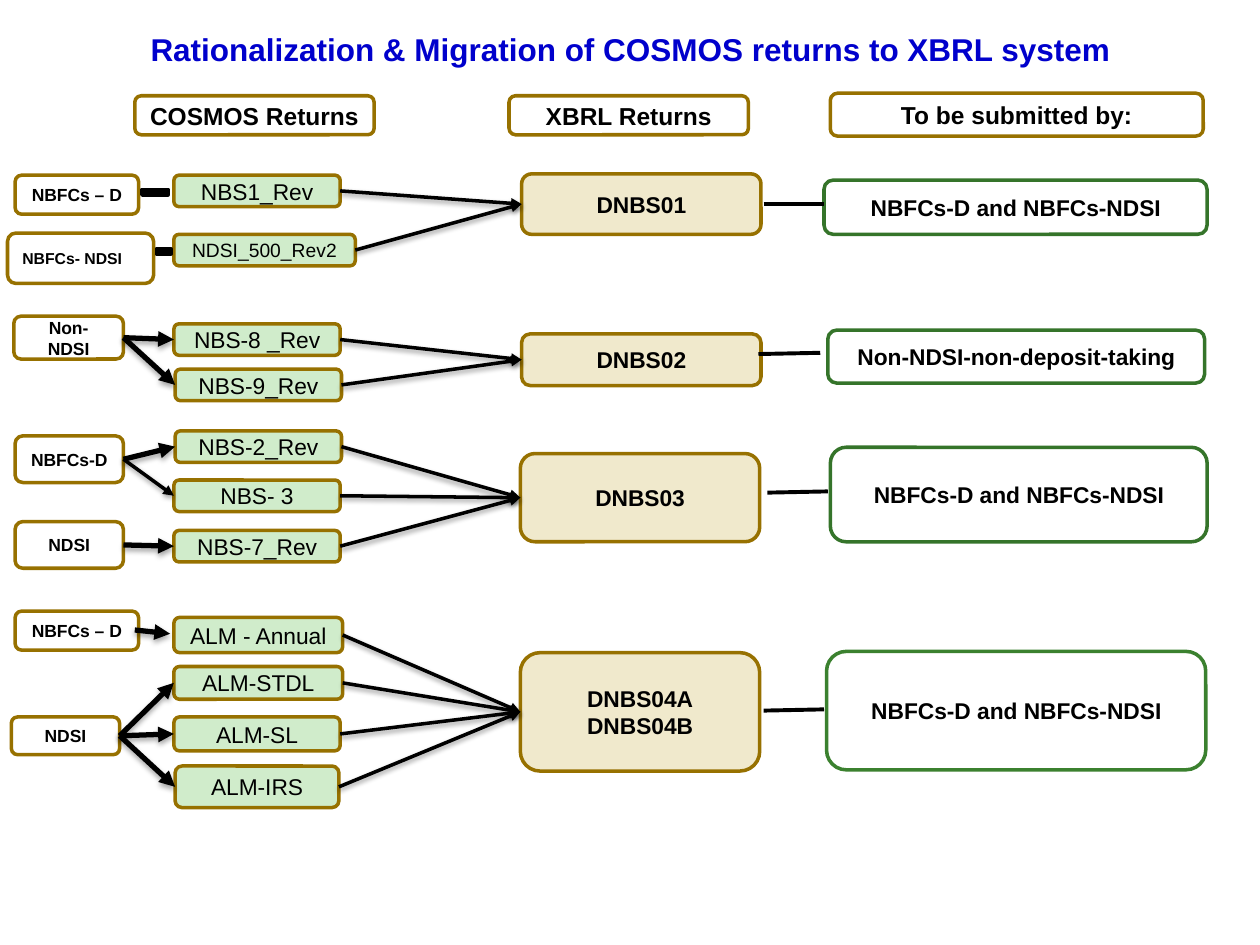
from pptx import Presentation
from pptx.dml.color import RGBColor
from pptx.enum.shapes import MSO_CONNECTOR, MSO_SHAPE
from pptx.enum.text import MSO_ANCHOR, PP_ALIGN
from pptx.oxml import parse_xml
from pptx.oxml.ns import nsdecls
from pptx.util import Pt

PX = 9144  # 100 px to the inch
BLACK, WHITE, GOLD, GREEN = "000000", "FFFFFF", "977100", "35742A"

TITLE = "Rationalization & Migration of COSMOS returns to XBRL system"

# kind: fill, outline, text size, bold
STYLES = {
    "header": (WHITE, GOLD, 14, True),
    "filer": (WHITE, GOLD, 10, True),
    "cosmos": ("D0ECCB", GOLD, 13, False),
    "xbrl": ("F0E9CC", GOLD, 13, True),
    "submitter": (WHITE, GREEN, 13, True),
}

# key: kind, text, (left, top, width, height), format changes
BOXES = {
    "head cosmos": ("header", "COSMOS Returns", (107, 76, 190, 31), {}),
    "head xbrl": ("header", "XBRL Returns", (404, 76, 190, 31), {}),
    "head by": ("header", "To be submitted by:", (659, 74, 296, 34), {}),

    "d1": ("filer", "NBFCs – D", (12, 139, 98, 31), {}),
    "ndsi1": ("filer", "NBFCs- NDSI", (6, 185, 116, 40),
              {"size": 9, "align": PP_ALIGN.JUSTIFY}),
    "nbs1": ("cosmos", "NBS1_Rev", (138, 139, 132, 25), {}),
    "ndsi500": ("cosmos", "NDSI_500_Rev2", (138, 186, 144, 25), {"size": 11}),
    "dnbs01": ("xbrl", "DNBS01", (414, 138, 190, 48), {}),
    "by1": ("submitter", "NBFCs-D and NBFCs-NDSI", (654, 143, 304, 43), {}),

    "non": ("filer", "Non-NDSI", (11, 251, 87, 34), {}),
    "nbs8": ("cosmos", "NBS-8 _Rev", (138, 257, 132, 25), {}),
    "nbs9": ("cosmos", "NBS-9_Rev", (139, 293, 132, 25), {}),
    "dnbs02": ("xbrl", "DNBS02", (414, 265, 190, 41), {}),
    "by2": ("submitter", "Non-NDSI-non-deposit-taking", (657, 262, 299, 42), {}),

    "d3": ("filer", "NBFCs-D", (12, 346, 86, 37), {}),
    "ndsi3": ("filer", "NDSI", (12, 414, 86, 37), {}),
    "nbs2": ("cosmos", "NBS-2_Rev", (139, 342, 132, 25), {}),
    "nbs3": ("cosmos", "NBS- 3", (138, 381, 132, 25), {}),
    "nbs7": ("cosmos", "NBS-7_Rev", (138, 421, 132, 25), {}),
    "dnbs03": ("xbrl", "DNBS03", (413, 360, 190, 70), {}),
    "by3": ("submitter", "NBFCs-D and NBFCs-NDSI", (659, 355, 299, 75), {}),

    "d4": ("filer", "NBFCs – D", (12, 485, 98, 31), {}),
    "ndsi4": ("filer", "NDSI", (9, 569, 86, 30), {}),
    "annual": ("cosmos", "ALM - Annual", (138, 490, 134, 28), {}),
    "stdl": ("cosmos", "ALM-STDL", (138, 529, 134, 26), {}),
    "sl": ("cosmos", "ALM-SL", (138, 569, 132, 27), {}),
    "irs": ("cosmos", "ALM-IRS", (139, 608, 130, 33), {}),
    "dnbs04": ("xbrl", "DNBS04A\nDNBS04B", (413, 518, 190, 94), {}),
    "by4": ("submitter", "NBFCs-D and NBFCs-NDSI", (656, 517, 301, 94),
            {"line": "3B812F"}),
}

# source box: (target boxes, line width)
ARROWS = {
    "nbs1": (["dnbs01"], 2), "ndsi500": (["dnbs01"], 2),
    "nbs8": (["dnbs02"], 2), "nbs9": (["dnbs02"], 2),
    "nbs2": (["dnbs03"], 2), "nbs3": (["dnbs03"], 2), "nbs7": (["dnbs03"], 2),
    "annual": (["dnbs04"], 2), "stdl": (["dnbs04"], 2),
    "sl": (["dnbs04"], 2), "irs": (["dnbs04"], 2),
    "non": (["nbs8", "nbs9"], 3), "d3": (["nbs2"], 3), "ndsi3": (["nbs7"], 3),
    "ndsi4": (["stdl", "sl", "irs"], 3),
}
THIN_ARROW = ("d3", "nbs3")
ANNUAL_ARROW = ((107, 500), (135, 503))

SUBMIT_LINES = [((606, 162), (654, 162)), ((602, 281), (651, 280)),
                ((609, 391), (657, 390)), ((606, 564), (654, 563))]
DASHES = [(109, 143, 28, 19), (122, 191, 16, 17)]


def emu(values):
    return [round(v * PX) for v in values]


def rgb(color):
    return RGBColor.from_string(color)


def add_text(tf, text, align=PP_ALIGN.CENTER, **font):
    tf.word_wrap = True
    tf.vertical_anchor = MSO_ANCHOR.MIDDLE
    for i, line in enumerate(text.split("\n")):
        p = tf.add_paragraph() if i else tf.paragraphs[0]
        p.alignment = align
        r = p.add_run()
        r.text = line
        r.font.color.rgb = rgb(font["color"])
        for name, value in {"name": "Arial", "size": Pt(font["size"]),
                            "bold": font["bold"]}.items():
            setattr(r.font, name, value)


def add_shape(s, preset, place, fill, line):
    sp = s.shapes.add_shape(preset, *emu(place))
    sp.shadow.inherit = False
    sp.fill.solid()
    sp.fill.fore_color.rgb = rgb(fill)
    sp.line.color.rgb = rgb(line)
    sp.line.width = Pt(2)
    return sp


def add_box(s, kind, text, place, changes):
    fill, line, size, bold = STYLES[kind]
    sp = add_shape(s, MSO_SHAPE.ROUNDED_RECTANGLE, place, fill,
                   changes.get("line", line))
    add_text(sp.text_frame, text, changes.get("align", PP_ALIGN.CENTER),
             size=changes.get("size", size), bold=bold, color=BLACK)


def add_line(s, start, end, width, arrow=False):
    """Draw a straight line; an arrow also gets a head and a soft shadow."""
    c = s.shapes.add_connector(MSO_CONNECTOR.STRAIGHT, *emu(start + end))
    c.line.color.rgb = rgb(BLACK)
    c.line.width = Pt(width)
    effects = parse_xml(f"<a:effectLst {nsdecls('a')}/>")
    if arrow:
        c.line._get_or_add_ln().append(
            parse_xml(f'<a:tailEnd {nsdecls("a")} type="triangle"/>'))
        dist, alpha = (Pt(1.6), 38000) if width == 2 else (Pt(1.8), 35000)
        effects.append(parse_xml(
            f'<a:outerShdw {nsdecls("a")} blurRad="{Pt(3.1)}" dist="{dist}" '
            f'dir="5400000" rotWithShape="0"><a:srgbClr val="{BLACK}">'
            f'<a:alpha val="{alpha}"/></a:srgbClr></a:outerShdw>'))
    c._element.spPr.append(effects)


def side(key, right):
    """Middle of the right or left side of a box."""
    left, top, width, height = BOXES[key][2]
    return left + width * right, top + height / 2


def main():
    prs = Presentation()
    prs.slide_width, prs.slide_height = emu((1000, 750))
    s = prs.slides.add_slide(prs.slide_layouts[6])

    title = s.shapes.add_textbox(*emu((20, 18, 961, 41)))
    add_text(title.text_frame, TITLE, size=18, bold=True, color="0000CC")

    for box in BOXES.values():
        add_box(s, *box)
    for place in DASHES:
        add_shape(s, MSO_SHAPE.MATH_MINUS, place, BLACK, BLACK)

    links = [(source, target, width)
             for source, (targets, width) in ARROWS.items() for target in targets]
    for source, target, width in links + [(*THIN_ARROW, 2)]:
        add_line(s, side(source, True), side(target, False), width, arrow=True)
    add_line(s, *ANNUAL_ARROW, 3, arrow=True)
    for start, end in SUBMIT_LINES:
        add_line(s, start, end, 2.25)

    prs.save("out.pptx")


if __name__ == "__main__":
    main()
